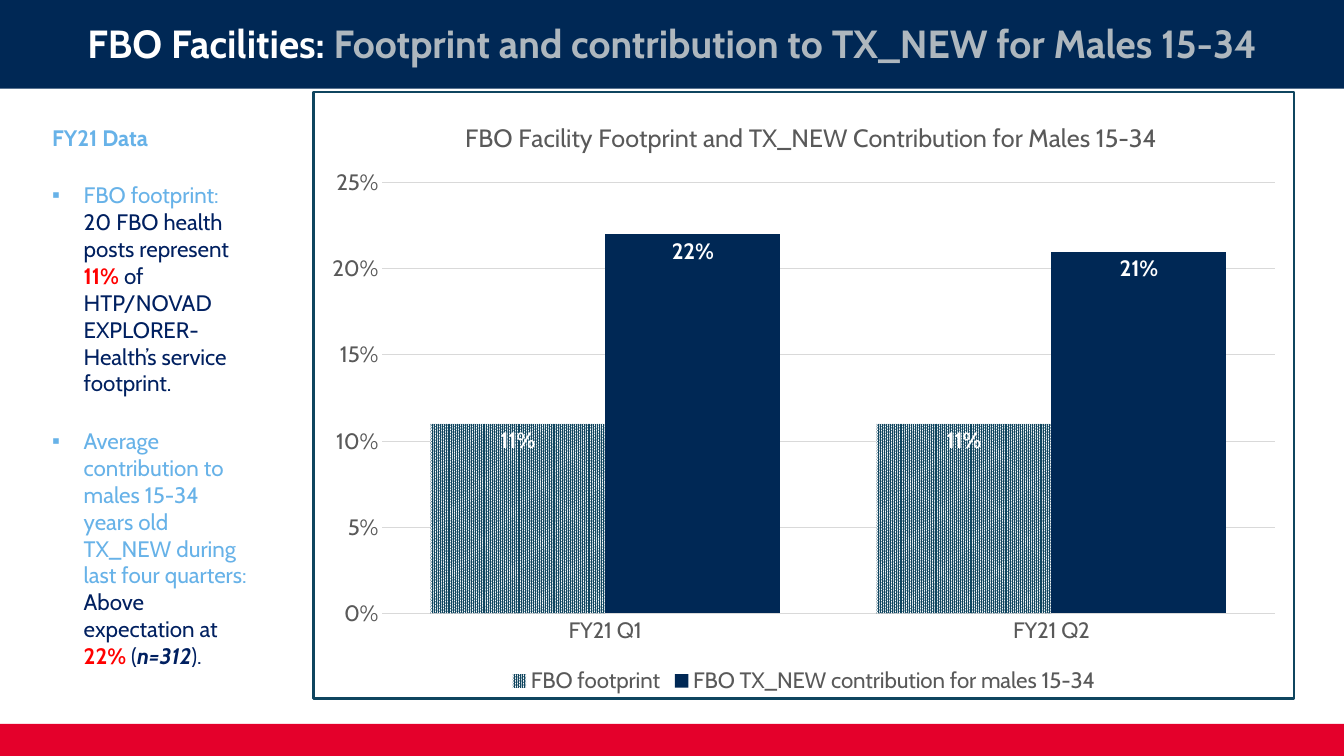
from pptx import Presentation
from pptx import util as u
from pptx.chart.data import CategoryChartData
from pptx.dml.color import RGBColor
from pptx.enum import chart as charts, dml, shapes, text
from pptx.oxml import parse_xml
from pptx.oxml.ns import nsdecls

NAVY, RED, WHITE = "002855", "E4002B", "FFFFFF"
SKY, INK, ALERT = "67B2E8", "002060", "FF0000"
SILVER, GREY, RULE, TEAL = "AEB7BE", "595959", "D9D9D9", "0F455F"


def color(value):
    return RGBColor.from_string(value)


def style_font(font, size=16, ink=GREY, bold=False, italic=False):
    font.name, font.size = "Cabin", u.Pt(size)
    font.bold, font.italic = bold, italic
    font.color.rgb = color(ink)


def add_text(para, words, line_break=False, **style):
    span = para.add_run()
    span.text = words
    style_font(span.font, **style)
    if line_break:
        para.add_line_break()


def add_bullet(para, mark, indent):
    props = para._p.get_or_add_pPr()
    props.set("marL", str(u.Pt(indent)))
    props.set("indent", str(-u.Pt(indent)))
    props.append(parse_xml(f'<a:buFont {nsdecls("a")} typeface="Arial"/>'))
    props.append(parse_xml(f'<a:buChar {nsdecls("a")} char="{mark}"/>'))


def place(parent, x, y, w=None, h=None):
    """Give a chart part a fixed place, in fractions of the chart."""
    for old in parent.findall("{*}layout"):
        parent.remove(old)
    inner = '<c:layoutTarget val="inner"/>' if w else ""
    modes = '<c:xMode val="edge"/><c:yMode val="edge"/>'
    sizes = {"x": x, "y": y, "w": w, "h": h}
    values = "".join(f'<c:{k} val="{v}"/>' for k, v in sizes.items() if v)
    layout = parse_xml(f'<c:layout {nsdecls("c")}><c:manualLayout>{inner}{modes}'
                       f'{values}</c:manualLayout></c:layout>')
    rich = parent.find("{*}tx")
    if rich is None:
        parent.insert(0, layout)
    else:
        rich.addnext(layout)


class SlideBuilder:
    def __init__(self, deck):
        self.slide = deck.slides.add_slide(deck.slide_layouts[6])

    def band(self, top, height, fill):
        box = self.slide.shapes.add_shape(
            shapes.MSO_SHAPE.RECTANGLE, 0, u.Pt(top), u.Pt(960), u.Pt(height))
        box.shadow.inherit = False
        box.fill.solid()
        box.fill.fore_color.rgb = color(fill)
        box.line.fill.background()
        return box

    def heading(self, spans):
        frame = self.band(-2.88, 66.24, NAVY).text_frame
        frame.word_wrap = True
        frame.vertical_anchor = text.MSO_ANCHOR.MIDDLE
        para = frame.paragraphs[0]
        para.alignment = text.PP_ALIGN.CENTER
        for words, ink in spans:
            add_text(para, words, size=28, ink=ink, bold=True)

    def findings(self, title, points):
        box = self.slide.shapes.add_textbox(
            u.Pt(30.24), u.Pt(84.96), u.Pt(156.24), u.Pt(362.16))
        frame = box.text_frame
        frame.word_wrap = True
        para = frame.paragraphs[0]
        para.space_after = u.Pt(22)
        add_text(para, title, ink=SKY, bold=True)
        for spans in points:
            para = frame.add_paragraph()
            para.space_after = u.Pt(22)
            add_bullet(para, "▪", 22.5)
            for words, style in spans:
                add_text(para, words, **style)

    def column_chart(self, title, categories, series):
        data = CategoryChartData(number_format="0%")
        data.categories = categories
        for name, values in series:
            data.add_series(name, values)
        chart = self.slide.shapes.add_chart(
            charts.XL_CHART_TYPE.COLUMN_CLUSTERED, u.Pt(223.2), u.Pt(64.8),
            u.Pt(702), u.Pt(434.88), data).chart
        style_font(chart.font)

        chart.has_title = True
        add_text(chart.chart_title.text_frame.paragraphs[0], title, size=18)
        chart.chart_title.include_in_layout = False
        chart.has_legend = True
        chart.legend.position = charts.XL_LEGEND_POSITION.BOTTOM
        chart.legend.include_in_layout = False
        style_font(chart.legend.font)

        for axis in (chart.category_axis, chart.value_axis):
            axis.major_tick_mark = charts.XL_TICK_MARK.NONE
            style_font(axis.tick_labels.font)
        scale = chart.value_axis
        scale.minimum_scale, scale.maximum_scale, scale.major_unit = 0, 0.25, 0.05
        scale.tick_labels.number_format = "0%"
        scale.tick_labels.number_format_is_linked = False
        scale.format.line.fill.background()
        for line in (chart.category_axis.format.line, scale.major_gridlines.format.line):
            line.color.rgb = color(RULE)
            line.width = u.Pt(0.75)

        plot = chart.plots[0]
        plot.gap_width, plot.overlap, plot.vary_by_categories = 55, 0, False
        footprint, contribution = plot.series
        fill = footprint.format.fill
        fill.patterned()
        fill.pattern = dml.MSO_PATTERN.PERCENT_90
        fill.fore_color.rgb, fill.back_color.rgb = color(TEAL), color(WHITE)
        contribution.format.fill.solid()
        contribution.format.fill.fore_color.rgb = color(NAVY)
        for bars in plot.series:
            labels = bars.data_labels
            labels.show_value = True
            labels.position = charts.XL_LABEL_POSITION.INSIDE_END
            labels.number_format, labels.number_format_is_linked = "0%", False
            style_font(labels.font, ink=WHITE, bold=True)

        root = chart.element.find("{*}chart")
        place(root.find("{*}title"), 0.15, 0.04)
        place(root.find("{*}plotArea"), 0.07, 0.15, 0.91, 0.71)
        root.addnext(parse_xml(
            f'<c:spPr {nsdecls("c", "a")}><a:solidFill><a:srgbClr val="{WHITE}"/>'
            f'</a:solidFill><a:ln w="{u.Pt(1.5)}"><a:solidFill>'
            f'<a:srgbClr val="{TEAL}"/></a:solidFill></a:ln></c:spPr>'))


def main():
    deck = Presentation()
    deck.slide_width, deck.slide_height = u.Pt(960), u.Pt(540)
    page = SlideBuilder(deck)
    page.band(517, 23, RED)
    body, lead = {"ink": INK}, {"ink": SKY}
    figure = {"ink": ALERT, "bold": True}
    page.findings("FY21 Data", [
        [("FBO footprint: ", {**lead, "line_break": True}),
         ("20 FBO health posts represent ", body),
         ("11% ", figure),
         ("of HTP/NOVAD EXPLORER-Health’s service footprint.", body)],
        [("Average contribution to males 15-34 years old TX_NEW during "
          "last four quarters: ", lead),
         ("Above expectation at ", body),
         ("22% ", figure),
         ("(", body),
         ("n=312", {**body, "bold": True, "italic": True}),
         (").", body)],
    ])
    page.heading([("FBO Facilities: ", WHITE),
                  ("Footprint and contribution to TX_NEW for Males 15-34", SILVER)])
    page.column_chart(
        "FBO Facility Footprint and TX_NEW Contribution for Males 15-34",
        ["FY21 Q1", "FY21 Q2"],
        [("FBO footprint", (0.11, 0.11)),
         ("FBO TX_NEW contribution for males 15-34", (0.22, 0.21))])
    deck.save("out.pptx")


if __name__ == "__main__":
    main()
